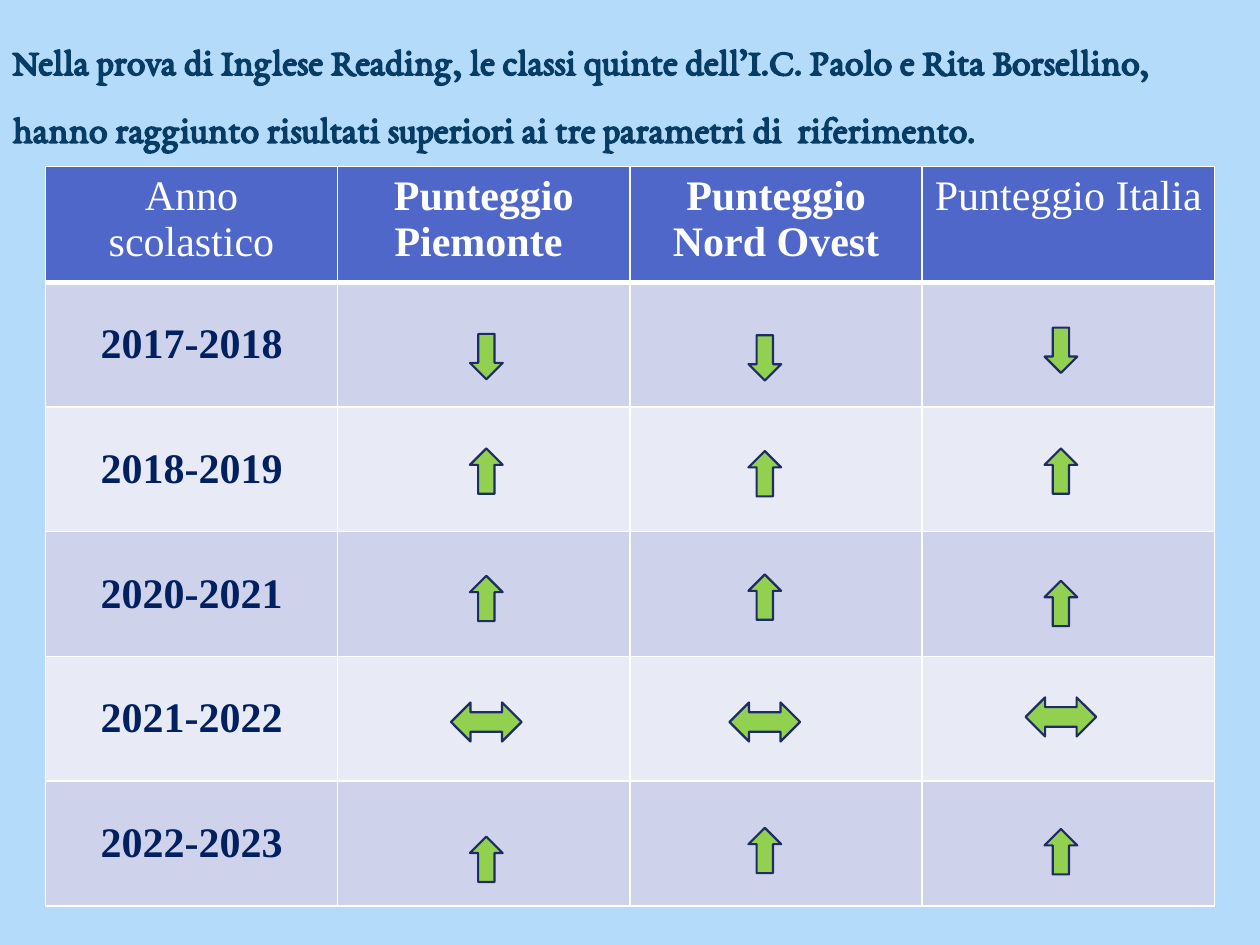
from dataclasses import dataclass

from lxml.etree import SubElement
from pptx import Presentation
from pptx.dml.color import RGBColor
from pptx.enum.shapes import MSO_SHAPE as Shape
from pptx.enum.text import MSO_ANCHOR as Anchor, MSO_AUTO_SIZE as AutoSize, PP_ALIGN as Align
from pptx.oxml.ns import qn
from pptx.util import Inches, Pt


@dataclass(frozen=True)
class Theme:
    background: str = "B4DCFA"
    title: str = "073C65"
    header: str = "4E67C8"
    bands: tuple = ("CFD2EB", "E8EAF5")
    white: str = "FFFFFF"
    year: str = "002060"
    arrow: str = "92D050"
    outline: str = "1D2C66"
    title_font: str = "EB Garamond"
    table_font: str = "Times New Roman"
    title_size: float = 21.5
    table_size: float = 24


THEME = Theme()

TITLE = (
    "Nella prova di Inglese Reading, le classi quinte dell’I.C. Paolo e Rita Borsellino,",
    "hanno raggiunto risultati superiori ai tre parametri di  riferimento.",
)
# Heading and whether it is bold
HEADERS = (
    ("Anno scolastico", False),
    ("Punteggio Piemonte ", True),
    ("Punteggio Nord Ovest", True),
    ("Punteggio Italia", False),
)
# Year, trend, and the arrow centre of each score column, in inches from the top
RESULTS = (
    ("2017-2018", "down", (2.83, 2.84, 2.78)),
    ("2018-2019", "up", (3.74, 3.76, 3.74)),
    ("2020-2021", "up", (4.75, 4.74, 4.79)),
    ("2021-2022", "level", (5.73, 5.73, 5.69)),
    ("2022-2023", "up", (6.82, 6.75, 6.76)),
)
ARROW_CENTRES_X = (3.86, 6.07, 8.42)
# Preset, width, height, rotation
ARROWS = {
    "up": (Shape.UP_ARROW, 0.26, 0.36, 0),
    "down": (Shape.UP_ARROW, 0.26, 0.36, 180),
    "level": (Shape.LEFT_RIGHT_ARROW, 0.56, 0.31, 0),
}
TABLE_LEFT, TABLE_TOP = 0.36, 1.32
COLUMN_WIDTH, HEADER_HEIGHT, ROW_HEIGHT = 2.32, 0.92, 0.99


def set_fill(fill, color):
    fill.solid()
    fill.fore_color.rgb = RGBColor.from_string(color)


def write(p, text, *, font, size, color, bold=True, align=Align.LEFT, spacing=None):
    p.alignment = align
    p.line_spacing = spacing
    r = p.add_run()
    r.text = text
    r.font.name = font
    r.font.size = Pt(size)
    r.font.bold = bold
    r.font.color.rgb = RGBColor.from_string(color)


def set_borders(cell, **widths):
    """Draw white borders; widths are points keyed by side: L, R, T, B."""
    tcPr = cell._tc.get_or_add_tcPr()
    for side, width in widths.items():
        ln = SubElement(tcPr, qn(f"a:ln{side}"), w=str(Pt(width)))
        SubElement(SubElement(ln, qn("a:solidFill")), qn("a:srgbClr"), val=THEME.white)


def format_title(title):
    title.left, title.top = 0, Inches(0.07)
    title.width, title.height = Inches(11.34), Inches(1.15)
    tf = title.text_frame
    tf.word_wrap = True
    tf.auto_size = AutoSize.NONE
    tf.vertical_anchor = Anchor.TOP
    for i, line in enumerate(TITLE):
        p = tf.add_paragraph() if i else tf.paragraphs[0]
        write(p, line, font=THEME.title_font, size=THEME.title_size,
              color=THEME.title, spacing=1.5)


def write_cell(cell, text, color, bold=True):
    write(cell.text_frame.paragraphs[0], text, font=THEME.table_font,
          size=THEME.table_size, color=color, bold=bold, align=Align.CENTER)


def add_results_table(s):
    rows, cols = len(RESULTS) + 1, len(HEADERS)
    heights = [HEADER_HEIGHT] + [ROW_HEIGHT] * len(RESULTS)
    table = s.shapes.add_table(
        rows, cols, Inches(TABLE_LEFT), Inches(TABLE_TOP),
        Inches(COLUMN_WIDTH * cols), Inches(sum(heights))).table
    for column in table.columns:
        column.width = Inches(COLUMN_WIDTH)
    for i, height in enumerate(heights):
        table.rows[i].height = Inches(height)
        header_edge = 3 if i <= 1 else 1
        for j in range(cols):
            cell = table.cell(i, j)
            set_borders(cell, L=1, R=1, T=header_edge if i else 1,
                        B=1 if i else header_edge)
            set_fill(cell.fill, THEME.bands[(i - 1) % 2] if i else THEME.header)
    for j, (text, bold) in enumerate(HEADERS):
        write_cell(table.cell(0, j), text, THEME.white, bold)
    for i, (year, _, _) in enumerate(RESULTS, start=1):
        cell = table.cell(i, 0)
        cell.vertical_anchor = Anchor.MIDDLE
        write_cell(cell, year, THEME.year)


def add_arrow(s, trend, x, y):
    """Add a trend arrow centred on x, y."""
    preset, width, height, rotation = ARROWS[trend]
    sp = s.shapes.add_shape(preset, Inches(x - width / 2), Inches(y - height / 2),
                            Inches(width), Inches(height))
    sp.rotation = rotation
    sp.shadow.inherit = False
    set_fill(sp.fill, THEME.arrow)
    set_fill(sp.line.fill, THEME.outline)
    sp.line.width = Pt(1.25)


def main():
    prs = Presentation()
    prs.slide_width, prs.slide_height = Inches(10), Inches(7.5)
    s = prs.slides.add_slide(prs.slide_layouts.get_by_name("Title Only"))
    set_fill(s.background.fill, THEME.background)
    format_title(s.shapes.title)
    add_results_table(s)
    for _, trend, centres_y in RESULTS:
        for x, y in zip(ARROW_CENTRES_X, centres_y):
            add_arrow(s, trend, x, y)
    prs.save("out.pptx")


if __name__ == "__main__":
    main()
